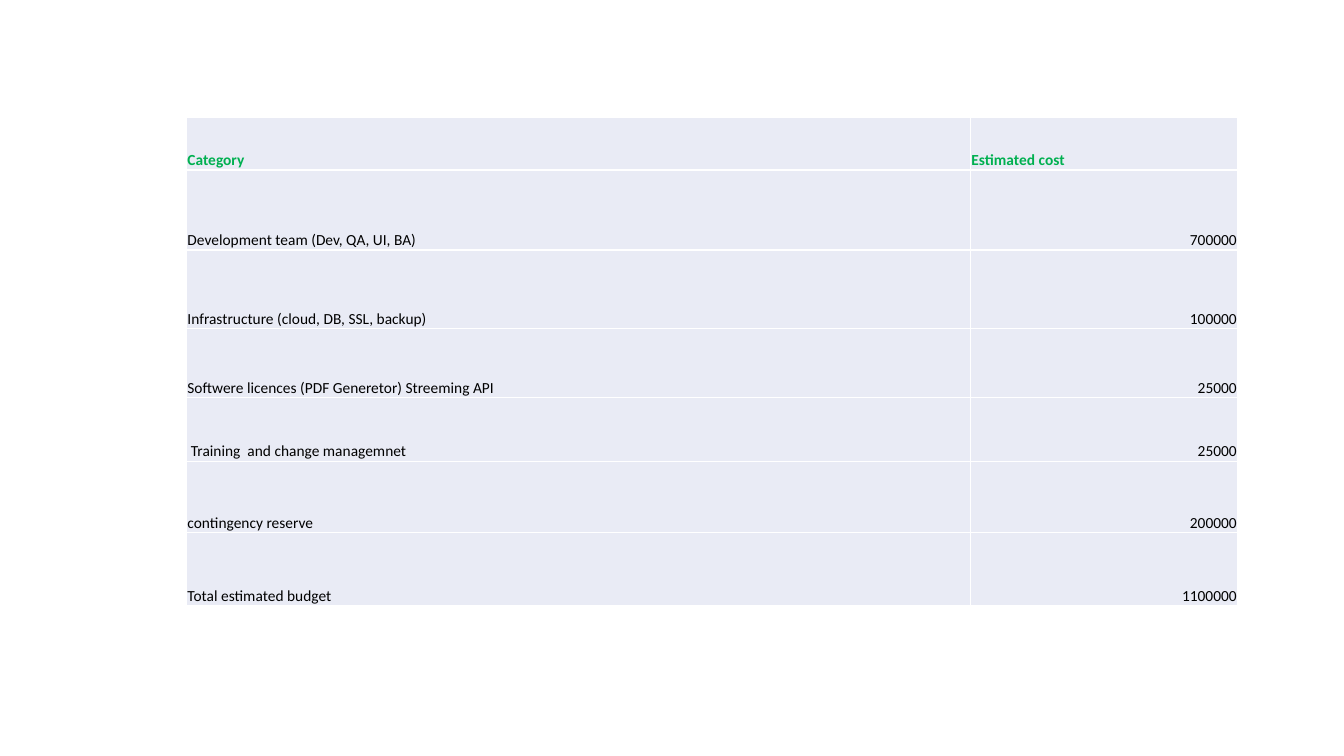
from pptx import Presentation
from pptx.dml.color import RGBColor
from pptx.enum.text import MSO_ANCHOR, PP_ALIGN
from pptx.util import Pt

HEADING_GREEN = RGBColor(0x00, 0xB0, 0x50)
BLACK = RGBColor(0x00, 0x00, 0x00)
CELL_FILL = RGBColor(0xE9, 0xEB, 0xF5)

# Each budget line: row height, category, estimated cost
BUDGET = [
    (37.3, "Category", "Estimated cost"),
    (57.2, "Development team (Dev, QA, UI, BA)", "700000"),
    (56.1, "Infrastructure (cloud, DB, SSL, backup)", "100000"),
    (49.3, "Softwere licences (PDF Generetor) Streeming API", "25000"),
    (45.4, " Training  and change managemnet", "25000"),
    (51, "contingency reserve", "200000"),
    (52.3, "Total estimated budget", "1100000"),
]
COLUMN_WIDTHS = (560, 190.6)

prs = Presentation()
prs.slide_width, prs.slide_height = Pt(960), Pt(540)
slide = prs.slides.add_slide(prs.slide_layouts[6])

# Budget table; its plain style draws thin white rules between cells
table_height = sum(height for height, _, _ in BUDGET)
budget = slide.shapes.add_table(
    len(BUDGET), len(COLUMN_WIDTHS),
    Pt(133.4), Pt(84.2), Pt(sum(COLUMN_WIDTHS)), Pt(table_height),
).table
budget.first_row = False
budget.horz_banding = False
for column, width in zip(budget.columns, COLUMN_WIDTHS):
    column.width = Pt(width)

# Cells: green bold headings, then categories with right-aligned costs
for row, (height, *texts) in enumerate(BUDGET):
    budget.rows[row].height = Pt(height)
    is_heading = row == 0
    for col, text in enumerate(texts):
        cell = budget.cell(row, col)
        cell.fill.solid()
        cell.fill.fore_color.rgb = CELL_FILL
        cell.vertical_anchor = MSO_ANCHOR.BOTTOM
        cell.margin_left = cell.margin_right = cell.margin_top = Pt(0.5)
        cell.margin_bottom = Pt(0)
        cell.text_frame.text = text
        paragraph = cell.text_frame.paragraphs[0]
        if col == 1 and not is_heading:
            paragraph.alignment = PP_ALIGN.RIGHT
        font = paragraph.runs[0].font
        font.name = "Calibri"
        font.size = Pt(11)
        font.bold = is_heading
        font.color.rgb = HEADING_GREEN if is_heading else BLACK

prs.save("out.pptx")
